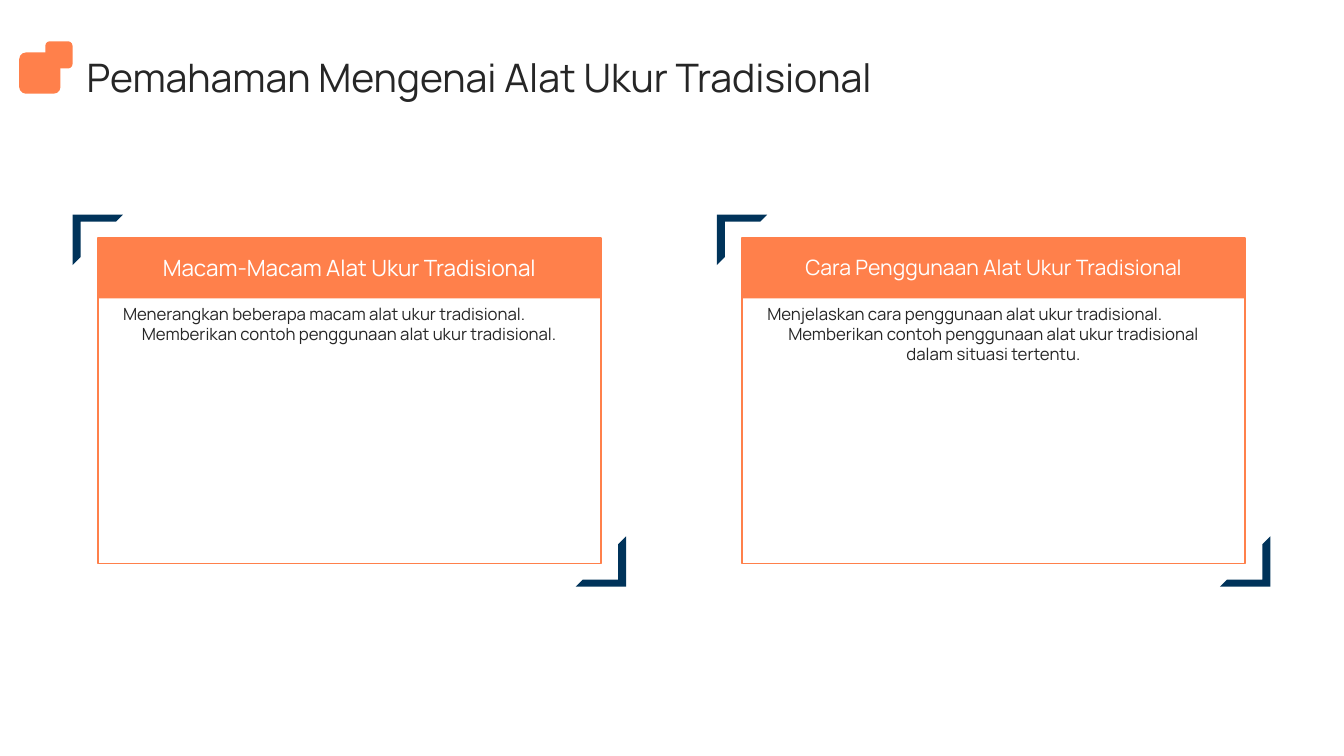
from dataclasses import dataclass

from lxml import etree
from pptx import Presentation
from pptx.dml.color import RGBColor
from pptx.enum.shapes import MSO_SHAPE
from pptx.enum.text import MSO_ANCHOR, MSO_AUTO_SIZE, PP_ALIGN
from pptx.oxml.ns import qn
from pptx.util import Emu, Pt

RECT, ROUND = MSO_SHAPE.RECTANGLE, MSO_SHAPE.ROUNDED_RECTANGLE
FRAME = MSO_SHAPE.HALF_FRAME
TOP, MIDDLE = MSO_ANCHOR.TOP, MSO_ANCHOR.MIDDLE
LEFT, CENTER = PP_ALIGN.LEFT, PP_ALIGN.CENTER
FIXED = MSO_AUTO_SIZE.NONE

ORANGE = RGBColor(0xFF, 0x80, 0x4B)
NAVY = RGBColor(0x00, 0x33, 0x5A)
WHITE = RGBColor(0xFF, 0xFF, 0xFF)
INK = RGBColor(0x26, 0x26, 0x26)
FONT = "Manrope"

SCALE = 9144  # EMU per px, 100 px to the inch
COMPARE = 4  # layout with a title and two headed lists
START, STEP = 72, 639  # left edge of the first card, distance to the next

Box = tuple[int, int, int, int]


@dataclass(frozen=True)
class Line:
    text: str
    align: PP_ALIGN


@dataclass(frozen=True)
class Card:
    head: str
    size: float
    lines: list[Line]


CARDS = [
    Card("Macam-Macam Alat Ukur Tradisional", 16, [
        Line("Menerangkan beberapa macam alat ukur tradisional.", LEFT),
        Line("Memberikan contoh penggunaan alat ukur tradisional.", CENTER),
    ]),
    Card("Cara Penggunaan Alat Ukur Tradisional", 15.1, [
        Line("Menjelaskan cara penggunaan alat ukur tradisional.", LEFT),
        Line("Memberikan contoh penggunaan alat ukur tradisional "
             "dalam situasi tertentu.", CENTER),
    ]),
]


def px(size: int) -> Emu:
    return Emu(size * SCALE)


def draw(slide, kind: MSO_SHAPE, box: Box, fill: RGBColor, edge: RGBColor | None = None):
    shape = slide.shapes.add_shape(kind, *map(px, box))
    shape.shadow.inherit = False
    shape.fill.solid()
    shape.fill.fore_color.rgb = fill
    if edge is None:
        shape.line.fill.background()
    else:
        shape.line.color.rgb = edge
        shape.line.width = Pt(1)
    return shape


def write(holder, box: Box, lines: list[Line], size: float, color: RGBColor,
          anchor: MSO_ANCHOR) -> None:
    """Move a placeholder to the front, place it and fill it."""
    holder.element.getparent().append(holder.element)
    holder.left, holder.top, holder.width, holder.height = map(px, box)
    frame = holder.text_frame
    frame.margin_left = frame.margin_right = 0
    frame.margin_top = frame.margin_bottom = 0
    frame.word_wrap, frame.auto_size = True, FIXED
    frame.vertical_anchor = anchor
    for num, line in enumerate(lines):
        para = frame.add_paragraph() if num else frame.paragraphs[0]
        para.alignment = line.align
        para.space_before = Pt(0)
        # No bullet and no indent
        props = para._p.get_or_add_pPr()
        props.set("marL", "0")
        props.set("indent", "0")
        etree.SubElement(props, qn("a:buNone"))
        run = para.add_run()
        run.text = line.text
        run.font.name, run.font.size = FONT, Pt(size)
        run.font.bold = False
        run.font.color.rgb = color


def add_card(slide, card: Card, left: int, head, body) -> None:
    # Corner brackets
    for x, y, turn in ((left, 213, 0), (left + 499, 532, 180)):
        mark = draw(slide, FRAME, (x, y, 50, 50), NAVY)
        mark.adjustments[0], mark.adjustments[1] = 0.14, 0.16
        mark.rotation = turn
    # Panel and heading band
    draw(slide, RECT, (left + 25, 236, 499, 323), WHITE, ORANGE)
    draw(slide, RECT, (left + 25, 236, 499, 60), ORANGE)
    # Text
    write(body, (left + 50, 301, 449, 231), card.lines, 12, INK, TOP)
    write(head, (left + 50, 235, 449, 60), [Line(card.head, CENTER)],
          card.size, WHITE, MIDDLE)


def main() -> None:
    deck = Presentation()
    deck.slide_width, deck.slide_height = px(1333), px(750)
    slide = deck.slides.add_slide(deck.slide_layouts[COMPARE])
    title, *slots = list(slide.placeholders)

    # Cards
    for num, card in enumerate(CARDS):
        head, body = slots[2 * num:2 * num + 2]
        add_card(slide, card, START + num * STEP, head, body)

    # Title and its ornament
    write(title, (86, 51, 1167, 51),
          [Line("Pemahaman Mengenai Alat Ukur Tradisional", LEFT)], 28, INK, MIDDLE)
    for box in ((19, 52, 41, 41), (45, 41, 27, 27)):
        draw(slide, ROUND, box, ORANGE)

    deck.save("out.pptx")


if __name__ == "__main__":
    main()
